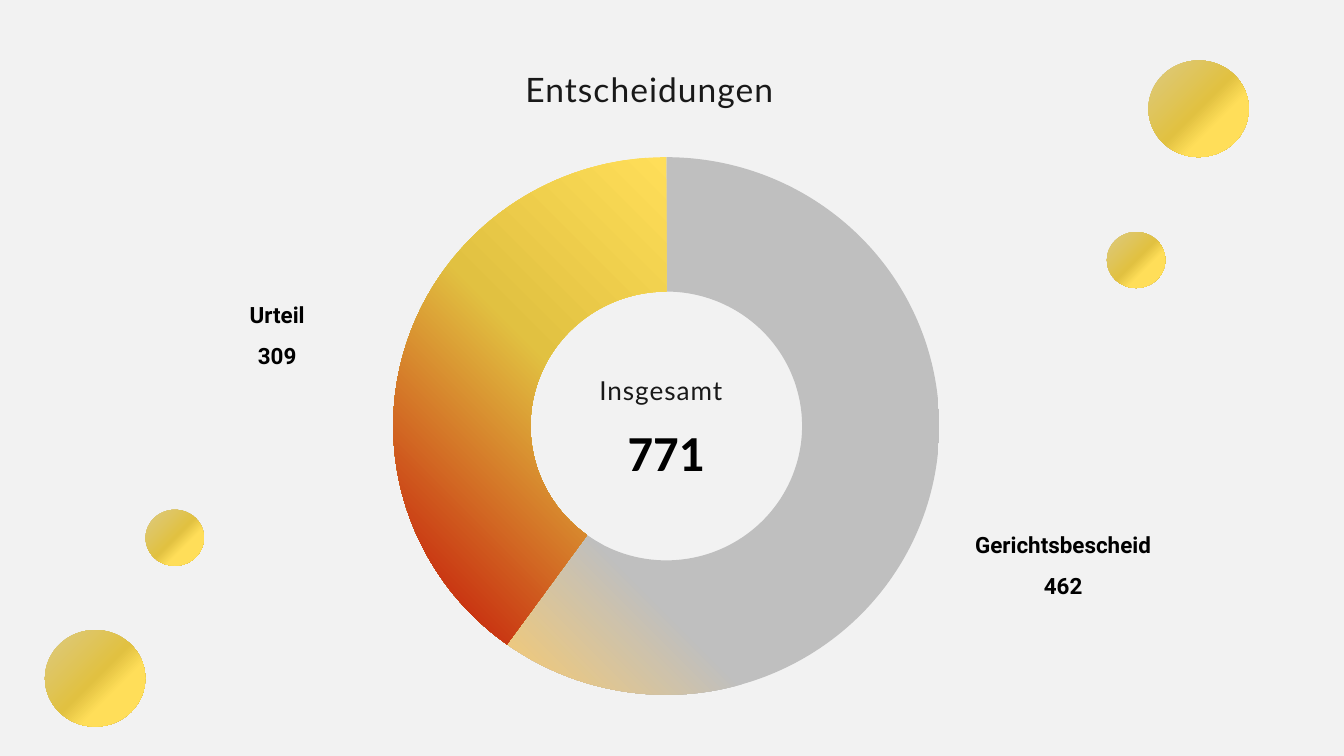
from dataclasses import dataclass
from math import ceil, cos, radians, sin, tan

from lxml.etree import SubElement
from pptx import Presentation
from pptx.dml.color import RGBColor
from pptx.enum.shapes import MSO_SHAPE
from pptx.enum.text import MSO_AUTO_SIZE, PP_ALIGN
from pptx.oxml import parse_xml
from pptx.oxml.ns import nsdecls, qn
from pptx.util import Pt


@dataclass(frozen=True)
class Theme:
    background: str = "F2F2F2"
    black: str = "000000"
    soft_black: str = "191919"
    # Gradient stops: position, colour, opacity in percent
    gold: tuple = ((0, "DCCA83", 100), (50, "E1C141", 100), (67, "FFDE59", 100))
    grey: tuple = ((0, "BFBFBF", 100), (73, "BFBFBF", 100), (100, "FFCC66", 100))
    bronze: tuple = ((0, "AA9231", 74), (50, "E1C141", 100), (100, "FFDE59", 100))
    red: tuple = ((0, "C00000", 100), (59, "E1C141", 100), (100, "FFDE59", 100))
    title_font: str = "Lato"
    label_font: str = "Roboto"
    total_font: str = "Calibri"
    label_size: int = 24
    caption_size: int = 28
    title_size: int = 36
    total_size: int = 54


LINEAR = '<a:lin ang="{}" scaled="0"/>'
FROM_BOTTOM_LEFT = '<a:path path="circle"><a:fillToRect t="100000" r="100000"/></a:path>'


class SlideBuilder:
    def __init__(self, s, theme):
        self.s, self.theme = s, theme
        fill = s.background.fill
        fill.solid()
        fill.fore_color.rgb = RGBColor.from_string(theme.background)

    def paint(self, sp, stops, direction):
        sp.shadow.inherit = False
        sp.line.fill.background()
        sp.fill.gradient()
        old = sp._element.spPr.find(qn("a:gradFill"))
        gs = "".join(f'<a:gs pos="{pos * 1000}"><a:srgbClr val="{color}">'
                     f'<a:alpha val="{opacity * 1000}"/></a:srgbClr></a:gs>'
                     for pos, color, opacity in stops)
        old.getparent().replace(old, parse_xml(
            f'<a:gradFill rotWithShape="1" {nsdecls("a")}>'
            f"<a:gsLst>{gs}</a:gsLst>{direction}</a:gradFill>"))

    def text(self, box, lines, font, size, color, bold=False, align=PP_ALIGN.LEFT,
             spacing=None, tracking=0, inset=True, wrap=True):
        sp = self.s.shapes.add_textbox(*map(Pt, box))
        tf = sp.text_frame
        tf.word_wrap = wrap
        tf.auto_size = MSO_AUTO_SIZE.SHAPE_TO_FIT_TEXT
        if not inset:
            tf.margin_left = tf.margin_top = tf.margin_right = tf.margin_bottom = 0
        for i, line in enumerate(lines):
            p = tf.add_paragraph() if i else tf.paragraphs[0]
            p.alignment = align
            p.line_spacing = spacing
            r = p.add_run()
            r.text = line
            r.font.name, r.font.size, r.font.bold = font, Pt(size), bold
            r.font.color.rgb = RGBColor.from_string(color)
            if tracking:
                r._r.get_or_add_rPr().set("spc", str(round(tracking * 100)))

    def label(self, box, name, value):
        t = self.theme
        self.text(box, (name, str(value)), t.label_font, t.label_size, t.black,
                  bold=True, align=PP_ALIGN.CENTER, spacing=1.5, inset=False)

    def ball(self, left, top, width, height):
        sp = self.s.shapes.add_shape(MSO_SHAPE.OVAL, *map(Pt, (left, top, width, height)))
        self.paint(sp, self.theme.gold, LINEAR.format(45 * 60000))

    def ring_segment(self, center, outer, inner, start, end, stops, direction):
        """Angles are degrees clockwise from twelve o'clock."""
        curves = ceil((end - start) / 75)

        def arc(radii, first, last):
            """Start point, then two handles and an end point for each curve."""
            step = radians(last - first) / curves
            k = 4 / 3 * tan(step / 4)

            def at(a, pull=0):
                return (Pt(center[0] + radii[0] * (sin(a) + pull * cos(a))),
                        Pt(center[1] - radii[1] * (cos(a) - pull * sin(a))))

            points = [at(radians(first))]
            for i in range(curves):
                a = radians(first) + i * step
                points += [at(a, k), at(a + step, -k), at(a + step)]
            return points

        points = arc(outer, start, end) + arc(inner, end, start)
        outline = self.s.shapes.build_freeform(*points[0])
        outline.add_line_segments(points[1:], close=True)
        sp = outline.convert_to_shape()

        # Turn each three points of an arc into one Bezier curve
        lines = list(sp._element.spPr.iter(qn("a:lnTo")))
        n = 3 * curves
        for i in (*range(0, n, 3), *range(n + 1, 2 * n + 1, 3)):
            parent = lines[i].getparent()
            curve = SubElement(parent, qn("a:cubicBezTo"))
            lines[i].addprevious(curve)
            for line in lines[i:i + 3]:
                curve.append(line[0])
                parent.remove(line)
        self.paint(sp, stops, direction)


def main():
    theme = Theme()
    prs = Presentation()
    prs.slide_width, prs.slide_height = Pt(1440), Pt(810)
    b = SlideBuilder(prs.slides.add_slide(prs.slide_layouts[6]), theme)

    # Labels beside the ring
    notices, judgments = 462, 309
    total = notices + judgments
    b.label((1029.6, 555, 218.9, 82), "Gerichtsbescheid", notices)
    b.label((246, 308.7, 102, 82), "Urteil", judgments)

    # Ring: the grey part runs a little under the red one, a hairline closes it
    split = 360 * notices / total
    ring = (713.9, 456.4), (292.5, 288), (145.5, 144)
    b.ring_segment(*ring, 0, split + 3, theme.grey, LINEAR.format(135 * 60000))
    b.ring_segment(*ring, 359.98, 360, theme.bronze, FROM_BOTTOM_LEFT)
    b.ring_segment(*ring, split, 360, theme.red, FROM_BOTTOM_LEFT)

    # Title and total
    b.text((563, 69.6, 481, 37), ("Entscheidungen",), theme.title_font, theme.title_size,
           theme.soft_black, spacing=Pt(47.2), tracking=1.1, inset=False)
    b.text((635, 397.5, 168, 63), ("Insgesamt",), theme.title_font, theme.caption_size,
           theme.soft_black, tracking=1.1, wrap=False)
    b.text((665.3, 447.4, 97, 73), (str(total),), theme.total_font, theme.total_size,
           theme.black, bold=True, wrap=False)

    # Golden balls in two corners
    large, small = (107.5, 103.5), (62.5, 60)
    for left, top, size in ((1230.5, 64.8, large), (1186, 248.6, small),
                            (48.2, 675, large), (156, 546.2, small)):
        b.ball(left, top, *size)

    prs.save("out.pptx")


if __name__ == "__main__":
    main()
